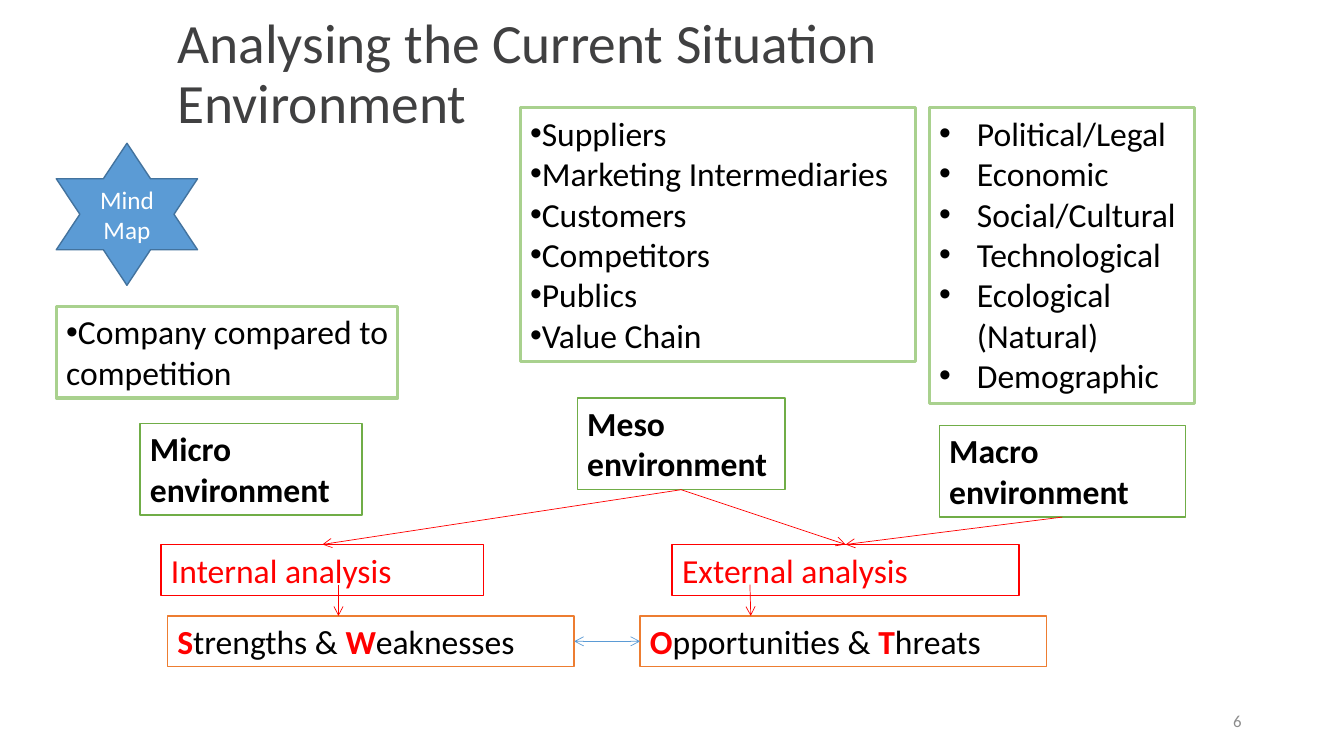
from dataclasses import dataclass

import pptx
import pptx.dml.color
import pptx.enum.dml
import pptx.enum.shapes
import pptx.enum.text
import pptx.oxml
import pptx.oxml.ns
import pptx.util
from lxml import etree

Cm = pptx.util.Cm
Pt = pptx.util.Pt
RGBColor = pptx.dml.color.RGBColor
Shapes = pptx.enum.shapes.MSO_SHAPE
Align = pptx.enum.text.PP_ALIGN
Anchor = pptx.enum.text.MSO_ANCHOR
AutoSize = pptx.enum.text.MSO_AUTO_SIZE

FONT = "Calibri"
BLACK = RGBColor(0x00, 0x00, 0x00)
WHITE = RGBColor(0xFF, 0xFF, 0xFF)
RED = RGBColor(0xFF, 0x00, 0x00)
GREEN = RGBColor(0x70, 0xAD, 0x47)
LIGHT_GREEN = RGBColor(0xA9, 0xD1, 0x8E)
ORANGE = RGBColor(0xED, 0x7D, 0x31)
BLUE = RGBColor(0x5B, 0x9B, 0xD5)
DARK_BLUE = RGBColor(0x43, 0x73, 0x9E)
TITLE_GREY = RGBColor(0x40, 0x40, 0x41)
NUMBER_GREY = RGBColor(0x8C, 0x8C, 0x8C)

TOP, LEFT, BOTTOM, RIGHT = range(4)  # connection sites of a rectangle


@dataclass
class Box:
    name: str
    left: float
    top: float
    width: float
    height: float
    lines: tuple[str, ...]
    border: RGBColor
    border_width: float = 1
    color: RGBColor = BLACK
    bold: bool = False
    bulleted: bool = False
    indent: float = 0
    initials: str = ""  # letters set apart in bold red


@dataclass
class Link:
    start: str
    start_site: int
    end: str
    end_site: int
    color: RGBColor = RED
    both_ends: bool = False


@dataclass
class Drop:
    start_x: float
    end_x: float


ROW_LISTS, ROW_ANALYSIS, ROW_SWOT = 2.72, 13.72, 15.52
ONE_LINE, TWO_LINES = 1.28, 2.31

BOXES = (
    Box("macro", 23.67, 10.72, 6.2, TWO_LINES, ("Macro environment",), GREEN, bold=True),
    Box("micro", 3.53, 10.67, 5.59, TWO_LINES, ("Micro environment",), GREEN, bold=True),
    Box("meso", 14.55, 10.03, 5.23, TWO_LINES, ("Meso environment",), GREEN, bold=True),
    Box("internal", 4.06, ROW_ANALYSIS, 8.13, ONE_LINE, ("Internal analysis",), RED, color=RED),
    Box("external", 16.94, ROW_ANALYSIS, 8.74, ONE_LINE, ("External analysis",), RED, color=RED),
    Box("strengths", 4.22, ROW_SWOT, 10.25, ONE_LINE, ("Strengths & Weaknesses",), ORANGE,
        initials="SW"),
    Box("opportunities", 16.13, ROW_SWOT, 10.25, ONE_LINE, ("Opportunities & Threats",), ORANGE,
        initials="OT"),
    Box("macro factors", 23.42, ROW_LISTS, 6.68, 7.44,
        ("Political/Legal", "Economic", "Social/Cultural", "Technological",
         "Ecological (Natural)", "Demographic"),
        LIGHT_GREEN, 2.25, bulleted=True, indent=0.95),
    Box("meso factors", 13.11, ROW_LISTS, 9.96, 6.4,
        ("Suppliers", "Marketing Intermediaries", "Customers", "Competitors",
         "Publics", "Value Chain"),
        LIGHT_GREEN, 2.25, bulleted=True),
    Box("micro factors", 1.42, 7.72, 8.61, TWO_LINES, ("Company compared to competition",),
        LIGHT_GREEN, 2.25, bulleted=True),
)

LINKS = (
    Link("meso", BOTTOM, "external", TOP),
    Link("meso", BOTTOM, "internal", TOP),
    Link("macro", BOTTOM, "external", TOP),
    Link("strengths", RIGHT, "opportunities", LEFT, BLUE, both_ends=True),
)

DROP_START = 14.73
DROPS = (Drop(8.53, 8.53), Drop(18.9, 18.92))


def style_span(span, size: float, color: RGBColor, bold: bool = False) -> None:
    span.font.name = FONT
    span.font.size = Pt(size)
    span.font.bold = bold
    span.font.color.rgb = color


def add_bullet(para, indent: float) -> None:
    properties = para._p.get_or_add_pPr()
    properties.set("marL", str(Cm(indent)))
    properties.set("indent", str(-Cm(indent)))
    font = etree.SubElement(properties, pptx.oxml.ns.qn("a:buFont"))
    font.set("typeface", "Arial")
    bullet = etree.SubElement(properties, pptx.oxml.ns.qn("a:buChar"))
    bullet.set("char", "•")


def split_initials(line: str, initials: str) -> list[str]:
    pieces = [""]
    for letter in line:
        if letter in initials:
            pieces += [letter, ""]
        else:
            pieces[-1] += letter
    return [piece for piece in pieces if piece]


def add_shape(page, kind, left: float, top: float, width: float, height: float,
              fill: RGBColor, border: RGBColor, border_width: float):
    shape = page.shapes.add_shape(kind, Cm(left), Cm(top), Cm(width), Cm(height))
    shape.shadow.inherit = False
    shape.fill.solid()
    shape.fill.fore_color.rgb = fill
    shape.line.color.rgb = border
    shape.line.width = Pt(border_width)
    shape.text_frame.word_wrap = True
    return shape


def add_box(page, box: Box):
    shape = add_shape(page, Shapes.RECTANGLE, box.left, box.top, box.width, box.height,
                      WHITE, box.border, box.border_width)
    frame = shape.text_frame
    frame.auto_size = AutoSize.SHAPE_TO_FIT_TEXT
    frame.vertical_anchor = Anchor.TOP
    for index, line in enumerate(box.lines):
        para = frame.add_paragraph() if index else frame.paragraphs[0]
        para.alignment = Align.LEFT
        if box.bulleted:
            add_bullet(para, box.indent)
        for piece in split_initials(line, box.initials):
            span = para.add_run()
            span.text = piece
            marked = piece in tuple(box.initials)
            style_span(span, 24, RED if marked else box.color, marked or box.bold)
    return shape


def add_arrow(page, start: tuple[float, float], end: tuple[float, float],
              color: RGBColor, both_ends: bool = False):
    arrow = page.shapes.add_connector(
        pptx.enum.shapes.MSO_CONNECTOR.STRAIGHT,
        Cm(start[0]), Cm(start[1]), Cm(end[0]), Cm(end[1]))
    arrow.line.color.rgb = color
    arrow.line.width = Pt(0.5)
    line = arrow.line._get_or_add_ln()
    for tag in ("a:headEnd", "a:tailEnd") if both_ends else ("a:tailEnd",):
        etree.SubElement(line, pptx.oxml.ns.qn(tag)).set("type", "arrow")
    etree.SubElement(arrow._element.spPr, pptx.oxml.ns.qn("a:effectLst"))
    return arrow


def set_plain_text(frame, text: str, size: float, color: RGBColor, alignment) -> None:
    frame.text = text
    frame.word_wrap = True
    frame.vertical_anchor = Anchor.MIDDLE
    para = frame.paragraphs[0]
    para.alignment = alignment
    style_span(para.runs[0], size, color)


def main() -> None:
    deck = pptx.Presentation()
    deck.slide_width, deck.slide_height = Cm(33.87), Cm(19.05)
    page = deck.slides.add_slide(deck.slide_layouts[5])

    # Title
    title = page.shapes.title
    title.left, title.top, title.width, title.height = Cm(4.22), Cm(0.53), Cm(24.74), Cm(2.74)
    set_plain_text(title.text_frame, "Analysing the Current Situation Environment",
                   39.6, TITLE_GREY, Align.LEFT)
    title.text_frame.auto_size = AutoSize.NONE
    title.text_frame.paragraphs[0].line_spacing = 0.9

    # Boxes and star
    shapes = {box.name: add_box(page, box) for box in BOXES}
    star = add_shape(page, Shapes.STAR_6_POINT, 1.42, 3.61, 3.56, 3.58, BLUE, DARK_BLUE, 1)
    set_plain_text(star.text_frame, "Mind Map", 18, WHITE, Align.CENTER)

    # Arrows
    for link in LINKS:
        arrow = add_arrow(page, (0, 0), (0, 0), link.color, link.both_ends)
        arrow.begin_connect(shapes[link.start], link.start_site)
        arrow.end_connect(shapes[link.end], link.end_site)
    for drop in DROPS:
        add_arrow(page, (drop.start_x, DROP_START), (drop.end_x, ROW_SWOT), RED)

    # Slide number
    number = page.shapes.add_textbox(Cm(23.92), Cm(17.66), Cm(7.62), Cm(1.01))
    set_plain_text(number.text_frame, "6", 12, NUMBER_GREY, Align.RIGHT)

    deck.save("out.pptx")


if __name__ == "__main__":
    main()
